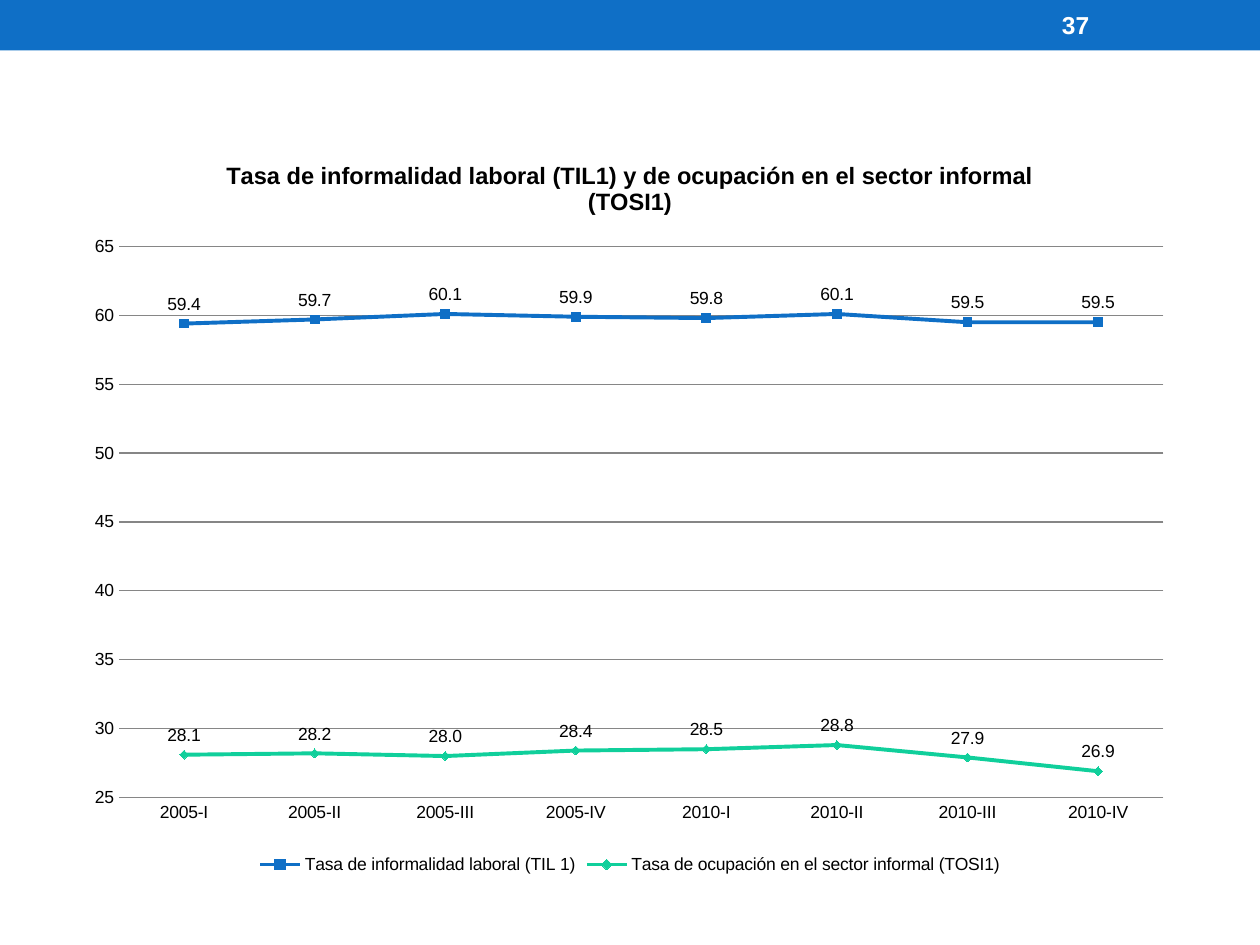
from lxml import etree
from pptx import Presentation
from pptx.chart.data import CategoryChartData
from pptx.dml.color import RGBColor
from pptx.enum.chart import (XL_CHART_TYPE, XL_LABEL_POSITION as LABEL_POS, XL_LEGEND_POSITION as LEGEND_POS,
                             XL_MARKER_STYLE as MARKER, XL_TICK_MARK as TICK)
from pptx.enum.shapes import MSO_SHAPE as SHAPE
from pptx.enum.text import MSO_ANCHOR as ANCHOR
from pptx.oxml.ns import qn
from pptx.util import Inches, Pt

BLUE = RGBColor(0x0F, 0x6F, 0xC6)
GREEN = RGBColor(0x10, 0xCF, 0x9B)
GRAY = RGBColor(0x86, 0x86, 0x86)
BLACK = RGBColor(0, 0, 0)
WHITE = RGBColor(255, 255, 255)

TITLE = "Tasa de informalidad laboral (TIL1) y de ocupación en el sector informal (TOSI1)"
QUARTERS = [f"{year}-{quarter}" for year in (2005, 2010) for quarter in ("I", "II", "III", "IV")]
RATES = [
    ("Tasa de informalidad laboral (TIL 1)", BLUE, MARKER.SQUARE,
     [59.4, 59.7, 60.1, 59.9, 59.8, 60.1, 59.5, 59.5]),
    ("Tasa de ocupación en el sector informal (TOSI1)", GREEN, MARKER.DIAMOND,
     [28.1, 28.2, 28.0, 28.4, 28.5, 28.8, 27.9, 26.9]),
]


def format_font(font, size=10, color=BLACK, bold=False):
    font.name, font.size, font.bold = "Arial", Pt(size), bold
    font.color.rgb = color


def write(tf, text, **fmt):
    """Put text in the first paragraph; fmt goes to format_font."""
    r = tf.paragraphs[0].add_run()
    r.text = text
    format_font(r.font, **fmt)


def place_plot(chart, **fractions):
    """Fix the inner plot area, in fractions of the chart frame."""
    plot_area = chart.plots[0]._element.getparent()
    for old in plot_area.findall(qn("c:layout")):
        plot_area.remove(old)
    layout = etree.Element(qn("c:layout"))
    manual = etree.SubElement(layout, qn("c:manualLayout"))
    settings = {"layoutTarget": "inner", "xMode": "edge", "yMode": "edge", **fractions}
    for name, value in settings.items():
        etree.SubElement(manual, qn(f"c:{name}")).set("val", str(value))
    plot_area.insert(0, layout)


class SlideBuilder:
    def __init__(self, prs):
        self.s = prs.slides.add_slide(prs.slide_layouts[6])

    def bar(self, x, y, w, h, color):
        sp = self.s.shapes.add_shape(SHAPE.RECTANGLE, Inches(x), Inches(y), Inches(w), Inches(h))
        sp.shadow.inherit = False
        sp.fill.solid()
        sp.fill.fore_color.rgb = color
        sp.line.fill.background()

    def text(self, x, y, w, h, text, **fmt):
        tf = self.s.shapes.add_textbox(Inches(x), Inches(y), Inches(w), Inches(h)).text_frame
        tf.word_wrap = True
        tf.vertical_anchor = ANCHOR.MIDDLE
        write(tf, text, **fmt)

    def line_chart(self, x, y, w, h, title, categories, series):
        data = CategoryChartData(number_format="0.0")
        data.categories = categories
        for name, _, _, values in series:
            data.add_series(name, values)
        chart = self.s.shapes.add_chart(XL_CHART_TYPE.LINE_MARKERS, Inches(x), Inches(y),
                                        Inches(w), Inches(h), data).chart
        format_font(chart.font)
        chart.has_title = True
        write(chart.chart_title.text_frame, title, size=13.5, bold=True)
        chart.chart_title.include_in_layout = False
        chart.has_legend = True
        chart.legend.position = LEGEND_POS.BOTTOM
        chart.legend.include_in_layout = False
        format_font(chart.legend.font)
        self.style_axes(chart)
        chart.plots[0].vary_by_categories = False
        for ser, (_, color, marker, _) in zip(chart.plots[0].series, series):
            self.style_series(ser, color, marker)
        place_plot(chart, x=0.04, y=0.15, w=0.94, h=0.74)

    def style_axes(self, chart):
        for axis in (chart.category_axis, chart.value_axis):
            axis.major_tick_mark = axis.minor_tick_mark = TICK.NONE
            format_font(axis.tick_labels.font)
        chart.category_axis.format.line.color.rgb = GRAY
        axis = chart.value_axis
        axis.minimum_scale, axis.maximum_scale, axis.major_unit = 25, 65, 5
        axis.tick_labels.number_format = "#,##0"
        axis.tick_labels.number_format_is_linked = False
        axis.format.line.fill.background()
        axis.has_major_gridlines = True
        axis.major_gridlines.format.line.color.rgb = GRAY
        axis.major_gridlines.format.line.width = Pt(0.75)

    def style_series(self, ser, color, marker):
        ser.smooth = False
        ser.format.line.color.rgb = color
        ser.format.line.width = Pt(2.25)
        ser.marker.style = marker
        ser.marker.size = 5
        ser.marker.format.fill.solid()
        ser.marker.format.fill.fore_color.rgb = color
        ser.marker.format.line.color.rgb = color
        labels = ser.data_labels
        labels.show_value = True
        labels.position = LABEL_POS.ABOVE
        labels.number_format = "#,##0.0"
        labels.number_format_is_linked = False
        format_font(labels.font)


def main():
    prs = Presentation()
    prs.slide_width, prs.slide_height = Inches(10), Inches(7.5)
    slide = SlideBuilder(prs)
    slide.bar(0, 0, 10, 0.4, BLUE)
    slide.text(8.33, 0.02, 1.17, 0.36, "37", size=14, color=WHITE, bold=True)
    slide.line_chart(0.59, 1.07, 8.82, 5.91, TITLE, QUARTERS, RATES)
    prs.save("out.pptx")


if __name__ == "__main__":
    main()
